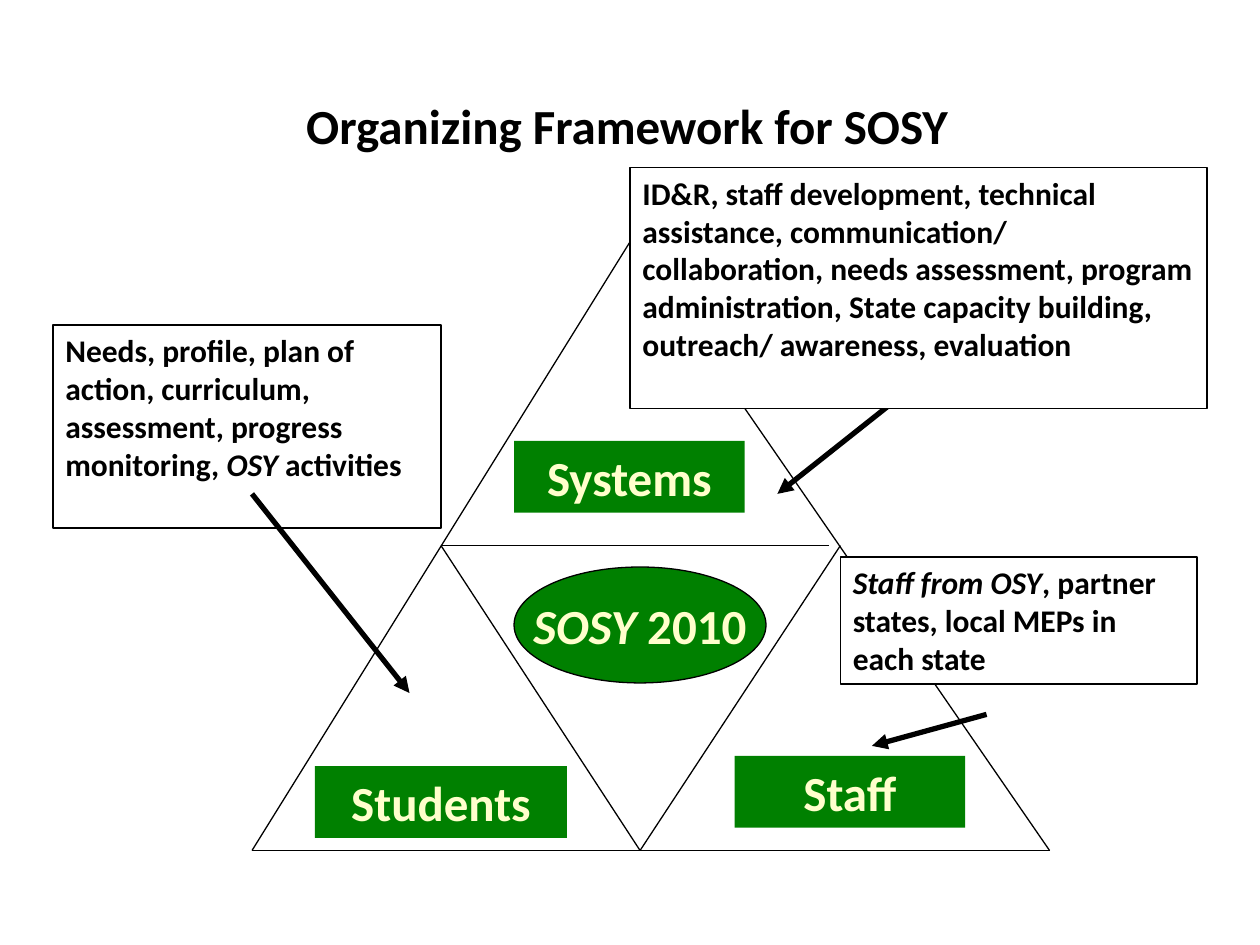
from lxml.etree import SubElement
from pptx import Presentation
from pptx.dml.color import RGBColor
from pptx.enum.shapes import MSO_CONNECTOR, MSO_SHAPE
from pptx.enum.text import MSO_ANCHOR, PP_ALIGN
from pptx.oxml.ns import qn
from pptx.util import Inches, Pt

COLORS = {"ink": "000000", "paper": "FFFFFF", "green": "008000", "cream": "FFFFCC"}


def rgb(name):
    return RGBColor.from_string(COLORS[name])


class Board:
    font = "Calibri"
    large = 28
    small = 18
    thin = 0.75
    thick = 3

    def __init__(self, slide):
        self.slide = slide

    def letter(self, shape, parts, size, color, align, anchor=MSO_ANCHOR.TOP, wrap=True):
        frame = shape.text_frame
        frame.word_wrap = wrap
        frame.vertical_anchor = anchor
        line = frame.paragraphs[0]
        line.alignment = align
        for text, slant in parts:
            run = line.add_run()
            run.text = text
            font = run.font
            font.name, font.size = self.font, Pt(size)
            font.bold, font.italic = True, slant
            font.color.rgb = rgb(color)

    def title(self, text, box):
        shape = self.slide.shapes.title
        shape.left, shape.top, shape.width, shape.height = map(Inches, box)
        self.letter(shape, [(text, False)], self.large, "ink", PP_ALIGN.LEFT)

    def shape(self, kind, box, fill, edge):
        shape = self.slide.shapes.add_shape(kind, *map(Inches, box))
        shape.shadow.inherit = False
        shape.fill.solid()
        shape.fill.fore_color.rgb = rgb(fill)
        if edge:
            shape.line.color.rgb = rgb("ink")
            shape.line.width = Pt(self.thin)
        else:
            shape.line.fill.background()
        return shape

    def label(self, text, box):
        shape = self.shape(MSO_SHAPE.RECTANGLE, box, "green", False)
        self.letter(shape, [(text, False)], self.large, "cream", PP_ALIGN.CENTER)

    def core(self, parts, box):
        shape = self.shape(MSO_SHAPE.OVAL, box, "green", True)
        self.letter(shape, parts, self.large, "cream", PP_ALIGN.CENTER,
                    MSO_ANCHOR.MIDDLE, False)

    def note(self, parts, box):
        shape = self.shape(MSO_SHAPE.RECTANGLE, box, "paper", True)
        self.letter(shape, parts, self.small, "ink", PP_ALIGN.LEFT)

    def line(self, start, end, width=thin):
        line = self.slide.shapes.add_connector(
            MSO_CONNECTOR.STRAIGHT, *map(Inches, (*start, *end)))
        line.line.color.rgb = rgb("ink")
        line.line.width = Pt(width)
        SubElement(line._element.spPr, qn("a:effectLst"))
        return line

    def arrow(self, start, end):
        line = self.line(start, end, self.thick)
        edge = line._element.spPr.find(qn("a:ln"))
        SubElement(edge, qn("a:tailEnd"), type="triangle")


def main():
    deck = Presentation()
    deck.slide_width, deck.slide_height = Inches(10), Inches(7.5)
    board = Board(deck.slides.add_slide(deck.slide_layouts[5]))
    board.title("Organizing Framework for SOSY", (2.33, 0.71, 5.33, 0.57))

    top, left, right = (5, 1.92), (2, 6.75), (8.33, 6.75)
    west, east, base = (3.5, 4.33), (6.67, 4.33), (5.08, 6.75)
    for start, end in ((top, left), (top, right), (left, right),
                       (west, (6.58, 4.33)), (base, west), (east, base)):
        board.line(start, end)

    for text, x, y, width in (("Systems", 4.08, 3.5, 1.83),
                              ("Staff", 5.83, 6, 1.83),
                              ("Students", 2.5, 6.08, 2)):
        board.label(text, (x, y, width, 0.57))
    board.core([("SOSY", True), (" 2010", False)], (4.08, 4.5, 2, 0.92))

    board.note([("Staff from OSY", True),
                (", partner states, local MEPs in each state", False)],
               (6.67, 4.42, 2.83, 1.01))
    board.note([("Needs, profile, plan of action, curriculum, assessment, "
                 "progress monitoring, ", False),
                ("OSY", True), (" activities", False)],
               (0.42, 2.58, 3.08, 1.61))
    for start, end in (((2, 3.92), (3.25, 5.5)),
                       ((7.33, 3), (6.17, 3.92)),
                       ((7.83, 5.67), (6.92, 5.92))):
        board.arrow(start, end)
    board.note([("ID&R, staff development, technical assistance, communication/ "
                 "collaboration, needs assessment, program administration, "
                 "State capacity building, outreach/ awareness, evaluation", False)],
               (5, 1.33, 4.58, 1.91))

    deck.save("out.pptx")


if __name__ == "__main__":
    main()
